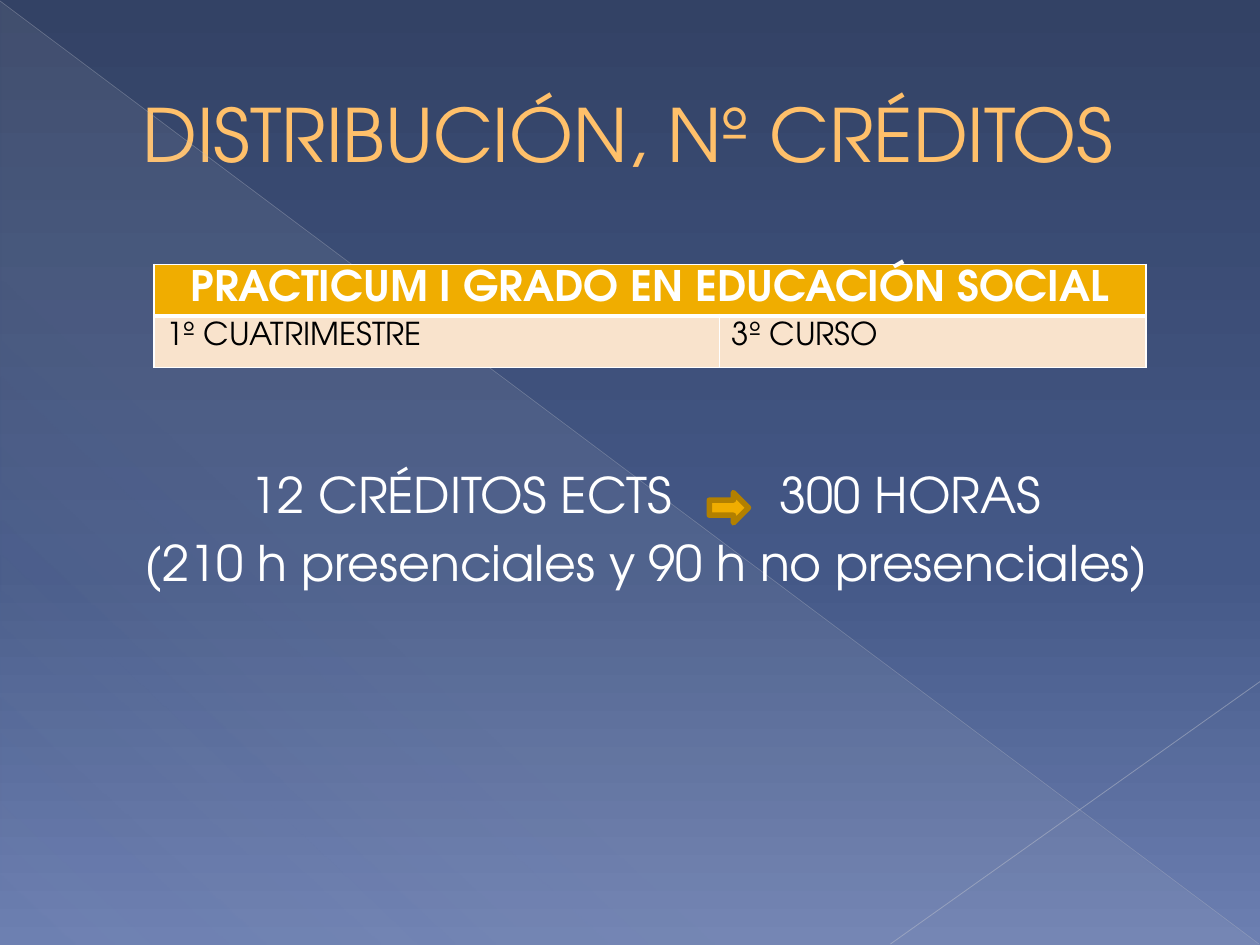
from lxml import etree
from pptx import Presentation
from pptx.dml.color import RGBColor as Rgb
from pptx.enum.shapes import MSO_CONNECTOR as Conn, MSO_SHAPE as Kind
from pptx.enum.text import MSO_ANCHOR as Anchor, PP_ALIGN as Align
from pptx.oxml import parse_xml
from pptx.oxml.ns import nsdecls, qn
from pptx.util import Cm, Pt

FONT = "TeX Gyre Adventor"
HEX = {
    "top": "334265", "mid": "445887", "low": "6C7FB1", "veil": "D4D4D6",
    "title": "FFC06A", "white": "FFFFFF", "black": "000000",
    "gold": "F0AD00", "edge": "B28000", "cream": "F9E3CC",
    "long": "B9BDC8", "short": "C1C4CE",
}


def grade(props, stops, angle):
    """Swap a solid fill for a gradient of (percent, colour, opacity) stops."""
    marks = "".join(
        f'<a:gs pos="{pos * 1000}"><a:srgbClr val="{HEX[tone]}">'
        f'<a:alpha val="{alpha * 1000}"/></a:srgbClr></a:gs>'
        for pos, tone, alpha in stops)
    fill = parse_xml(f'<a:gradFill {nsdecls("a")} rotWithShape="1"><a:gsLst>{marks}</a:gsLst>'
                     f'<a:lin ang="{angle * 60000}" scaled="0"/></a:gradFill>')
    props.replace(props.find(qn("a:solidFill")), fill)


def write(par, text, size, tone, bold=False, align=Align.LEFT):
    par.alignment = align
    run = par.add_run()
    run.text = text
    for key, val in {"name": FONT, "size": Pt(size), "bold": bold}.items():
        setattr(run.font, key, val)
    run.font.color.rgb = Rgb.from_string(HEX[tone])


deck = Presentation()
deck.slide_width, deck.slide_height = Cm(25.4), Cm(19.05)
slide = deck.slides.add_slide(deck.slide_layouts[5])
shapes = slide.shapes

# Background
slide.background.fill.solid()
grade(slide.element.find(".//" + qn("p:bgPr")),
      [(0, "top", 100), (60, "mid", 100), (100, "low", 100)], 90)

# Translucent corner
veil = shapes.add_shape(Kind.RIGHT_TRIANGLE, Cm(0.02), Cm(0.04), Cm(25.36), Cm(19))
veil.shadow.inherit = False
veil.line.fill.background()
veil.fill.solid()
grade(veil.element.spPr, [(0, "veil", 10), (70, "veil", 8), (100, "veil", 1)], 133)

# Diagonal lines
for x1, y1, x2, y2, tone, width, alpha in [
    (0, 0.02, 25.38, 19.03, "long", 0.39, 35),
    (25.4, 13.74, 17.95, 19.03, "short", 0.47, 45),
]:
    line = shapes.add_connector(Conn.STRAIGHT, Cm(x1), Cm(y1), Cm(x2), Cm(y2))
    line.line.width = Pt(width)
    line.line.color.rgb = Rgb.from_string(HEX[tone])
    props = line.element.spPr
    clr = props.find(".//" + qn("a:srgbClr"))
    etree.SubElement(clr, qn("a:alpha")).set("val", str(alpha * 1000))
    etree.SubElement(props, qn("a:effectLst"))

# Title
title = shapes.title
for key, val in {"left": 1.27, "top": 0.74, "width": 22.86, "height": 3.89}.items():
    setattr(title, key, Cm(val))
frame = title.text_frame
for key, val in {"vertical_anchor": Anchor.MIDDLE, "word_wrap": True,
                 "margin_left": Cm(1.6)}.items():
    setattr(frame, key, val)
write(frame.paragraphs[0], "DISTRIBUCIÓN, Nº CRÉDITOS", 42, "title")

# Course table
table = shapes.add_table(2, 2, Cm(3.1), Cm(5.33), Cm(20), Cm(2.08)).table
table.first_row = table.horz_banding = False
for col, width in zip(table.columns, (11.4, 8.6)):
    col.width = Cm(width)
for row in table.rows:
    row.height = Cm(1.04)
table.cell(0, 0).merge(table.cell(0, 1))
head = ("gold", 24, "white", True, Align.CENTER)
body = ("cream", 18, "black", False, Align.LEFT)
for r, c, text, (back, *style) in [
    (0, 0, "PRACTICUM I GRADO EN EDUCACIÓN SOCIAL", head),
    (0, 1, "", head),
    (1, 0, "1º CUATRIMESTRE", body),
    (1, 1, "3º CURSO", body),
]:
    cell = table.cell(r, c)
    for key, val in {"margin_left": 0.25, "margin_right": 0.25,
                     "margin_top": 0.13, "margin_bottom": 0}.items():
        setattr(cell, key, Cm(val))
    cell.vertical_anchor = Anchor.TOP
    cell.fill.solid()
    cell.fill.fore_color.rgb = Rgb.from_string(HEX[back])
    if text:
        write(cell.text_frame.paragraphs[0], text, *style)
    for spot, side in enumerate("LRTB"):
        thick = 3 if (r, side) in [(0, "B"), (1, "T")] else 1
        edge = parse_xml(f'<a:ln{side} {nsdecls("a")} w="{Pt(thick)}"><a:solidFill>'
                         f'<a:srgbClr val="{HEX["white"]}"/></a:solidFill></a:ln{side}>')
        cell._tc.tcPr.insert(spot, edge)

# Credits and hours, set on two tab stops
box = shapes.add_textbox(Cm(2.92), Cm(9.36), Cm(20.6), Cm(2.8))
frame = box.text_frame
frame.word_wrap = True
for side in ("left", "right", "top", "bottom"):
    setattr(frame, f"margin_{side}", 0)
first, second = frame.paragraphs[0], frame.add_paragraph()
write(first, "\t12 CRÉDITOS ECTS\t300 HORAS", 28, "white")
write(second, "(210 h presenciales y 90 h no presenciales)", 28, "white")
second.space_before = Pt(5.6)
tabs = etree.SubElement(first._p.get_or_add_pPr(), qn("a:tabLst"))
for stop in (2.13, 12.8):
    etree.SubElement(tabs, qn("a:tab"), pos=str(Cm(stop)), algn="l")

# Arrow
arrow = shapes.add_shape(Kind.RIGHT_ARROW, Cm(14.3), Cm(9.93), Cm(0.79), Cm(0.61))
arrow.shadow.inherit = False
arrow.fill.solid()
arrow.fill.fore_color.rgb = Rgb.from_string(HEX["gold"])
arrow.line.color.rgb = Rgb.from_string(HEX["edge"])
arrow.line.width = Pt(3.15)

deck.save("out.pptx")
